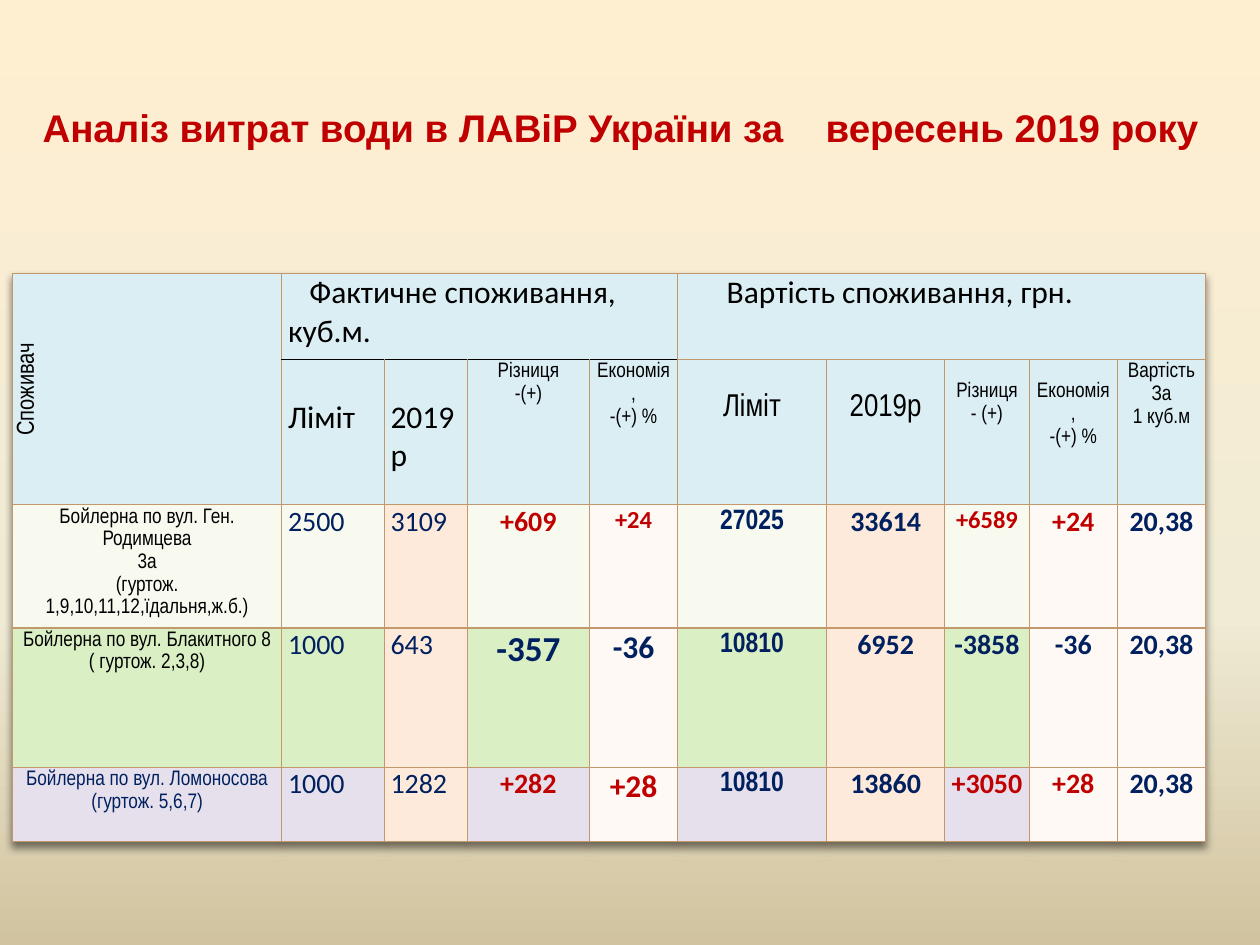
from copy import deepcopy
from dataclasses import dataclass

from lxml.etree import SubElement
from pptx import Presentation
from pptx.dml.color import RGBColor
from pptx.enum.text import MSO_ANCHOR, PP_ALIGN
from pptx.oxml import parse_xml
from pptx.oxml.ns import nsdecls, qn
from pptx.util import Pt

RED, NAVY, BLACK, BROWN = "C00000", "002060", "000000", "C3986D"
HEADER_FILL, YEAR_FILL, PALE_FILL = "DBEEF4", "FDEADA", "FEF9F4"
COLUMN_WIDTHS = [153.8, 58.6, 47.5, 69.8, 50.4, 85, 67.7, 48.2, 50.4, 50.4]
ROW_HEIGHTS = [49, 83, 70.4, 79.6, 42.5]
COLUMN_FILLS = {2: YEAR_FILL, 6: YEAR_FILL, 4: PALE_FILL, 8: PALE_FILL, 9: PALE_FILL}


@dataclass
class TextStyle:
    """Look of the text in one table cell."""
    size: float
    font: str = "Calibri"
    colour: str = BLACK
    bold: bool = False
    centred: bool = False
    indent: float = 0
    top: float = 0


def narrow(size, **options):
    """Return a centred Arial Narrow style."""
    return TextStyle(size, "Arial Narrow", centred=True, **options)


SUBHEADERS = [
    ("Ліміт", TextStyle(18, top=22)),
    ("2019р", TextStyle(18, top=22)),
    ("Різниця\n-(+)", narrow(12)),
    ("Економія,\n-(+) %", narrow(12)),
    ("Ліміт", narrow(18, top=17)),
    ("2019р", narrow(18, top=17)),
    ("Різниця\n- (+)", narrow(12, top=11.5)),
    ("Економія,\n-(+) %", narrow(12, top=11.5)),
    ("Вартість\nЗа\n1 куб.м", narrow(12)),
]
CONSUMERS = [
    ("Бойлерна по вул. Ген. Родимцева\n3а\n(гуртож. 1,9,10,11,12,їдальня,ж.б.)", BLACK, "F8FAF0",
     ["2500", "3109", "+609", "+24", "27025", "33614", "+6589", "+24", "20,38"], {4: 14, 7: 14}),
    ("Бойлерна по вул. Блакитного 8\n( гуртож. 2,3,8)", BLACK, "DAEFC3",
     ["1000", "643", "-357", "-36", "10810", "6952", "-3858", "-36", "20,38"], {3: 20, 4: 18}),
    ("Бойлерна по вул. Ломоносова\n(гуртож. 5,6,7)", NAVY, "E6E0EC",
     ["1000", "1282", "+282", "+28", "10810", "13860", "+3050", "+28", "20,38"], {4: 18}),
]


def rgb(value):
    """Turn a hex string into a colour."""
    return RGBColor.from_string(value)


def add_span(para, text, style):
    """Add one formatted run to a paragraph."""
    span = para.add_run()
    span.text = text
    span.font.size = Pt(style.size)
    span.font.name = style.font
    span.font.bold = style.bold
    span.font.color.rgb = rgb(style.colour)
    return span


def paint_background(slide):
    """Fill the background with a vertical three-stop gradient."""
    fill = slide.background.fill
    fill.gradient()
    fill.gradient_angle = 270
    stop_list = slide.element.xpath(".//p:bg//a:gsLst")[0]
    stop_list.append(deepcopy(stop_list[-1]))
    stops = [(0, "FFEFD1"), (0.65, "F0EBD5"), (1, "D1C39F")]
    for stop, (position, colour) in zip(fill.gradient_stops, stops):
        stop.position = position
        stop.color.rgb = rgb(colour)


def write_title(slide):
    """Place and format the slide title."""
    title = slide.shapes.title
    title.left, title.top, title.width, title.height = Pt(14.4), Pt(14.5), Pt(680.4), Pt(116)
    title.text_frame.vertical_anchor = MSO_ANCHOR.MIDDLE
    title.text_frame.word_wrap = True
    para = title.text_frame.paragraphs[0]
    para.alignment = PP_ALIGN.CENTER
    style = TextStyle(22, "Arial", RED, bold=True)
    add_span(para, "Аналіз витрат води в ЛАВіР України за", style)
    gap = add_span(para, " ", style)
    gap.font._element.set("spc", "1800")
    add_span(para, "вересень 2019 року", style)


def draw_border(cell, side, colour, width):
    """Add a solid line to one side of a cell."""
    line = SubElement(cell._tc.get_or_add_tcPr(), qn(f"a:ln{side}"), w=str(Pt(width)))
    fill = SubElement(line, qn("a:solidFill"))
    SubElement(fill, qn("a:srgbClr"), val=colour)


def format_cell(cell, fill, black_side=None):
    """Set the borders, fill and margins of a cell."""
    for side in "LRTB":
        colour, width = (BLACK, 1) if side == black_side else (BROWN, 0.79)
        draw_border(cell, side, colour, width)
    cell.fill.solid()
    cell.fill.fore_color.rgb = rgb(fill)
    cell.margin_left = cell.margin_right = Pt(3.6)
    cell.margin_top = cell.margin_bottom = 0


def write_cell(cell, text, style):
    """Write the lines of a cell as paragraphs."""
    cell.margin_top = Pt(style.top)
    frame = cell.text_frame
    for number, line in enumerate(text.split("\n")):
        para = frame.add_paragraph() if number else frame.paragraphs[0]
        para.alignment = PP_ALIGN.CENTER if style.centred else PP_ALIGN.LEFT
        if style.font == "Arial Narrow":
            para.line_spacing = 1.15
        if style.indent:
            para._p.get_or_add_pPr().set("indent", str(Pt(style.indent)))
        add_span(para, line, style)


def number_style(column, text, size):
    """Choose the style of a figure from its column and sign."""
    colour = RED if text.startswith("+") else NAVY
    font = "Arial Narrow" if column == 5 else "Calibri"
    return TextStyle(size, font, colour, bold=column > 2, centred=column > 2)


def add_shadow(table):
    """Give the table a soft shadow below it."""
    table._tbl.tblPr.insert(0, parse_xml(
        f'<a:effectLst {nsdecls("a")}><a:outerShdw blurRad="57150" dist="38100" dir="5400000" '
        'algn="ctr" rotWithShape="0"><a:srgbClr val="000000"><a:alpha val="50000"/>'
        '</a:srgbClr></a:outerShdw></a:effectLst>'))


def add_grid(slide):
    """Add the empty table with its sizes, fills and borders."""
    frame = slide.shapes.add_table(len(ROW_HEIGHTS), len(COLUMN_WIDTHS), Pt(7.2), Pt(156.5),
                                   Pt(sum(COLUMN_WIDTHS)), Pt(sum(ROW_HEIGHTS)))
    table = frame.table
    table.first_row = table.horz_banding = False
    for column, width in zip(table.columns, COLUMN_WIDTHS):
        column.width = Pt(width)
    for index, height in enumerate(ROW_HEIGHTS):
        table.rows[index].height = Pt(height)
        for column in range(len(COLUMN_WIDTHS)):
            fill = HEADER_FILL
            if index > 1:
                fill = COLUMN_FILLS.get(column, CONSUMERS[index - 2][2])
            black_side = {0: "B", 1: "T"}.get(index) if 1 <= column <= 4 else None
            format_cell(table.cell(index, column), fill, black_side)
    add_shadow(table)
    return table


def write_headers(table):
    """Merge and fill the two header rows."""
    for first, last in [((0, 0), (1, 0)), ((0, 1), (0, 4)), ((0, 5), (0, 9))]:
        table.cell(*first).merge(table.cell(*last))
    corner = table.cell(0, 0)
    write_cell(corner, "Споживач", narrow(14))
    corner.vertical_anchor = MSO_ANCHOR.MIDDLE
    corner._tc.get_or_add_tcPr().set("vert", "vert270")
    write_cell(table.cell(0, 1), "Фактичне споживання, куб.м.", TextStyle(18, indent=12.2))
    write_cell(table.cell(0, 5), "Вартість споживання, грн.", TextStyle(18, indent=24.4))
    for column, (text, style) in enumerate(SUBHEADERS, 1):
        write_cell(table.cell(1, column), text, style)


def write_consumers(table):
    """Fill one row for each consumer."""
    for row, (name, colour, _, figures, sizes) in enumerate(CONSUMERS, 2):
        write_cell(table.cell(row, 0), name, narrow(12, colour=colour))
        for column, text in enumerate(figures, 1):
            style = number_style(column, text, sizes.get(column, 16))
            write_cell(table.cell(row, column), text, style)


def main():
    """Build the deck and save it."""
    deck = Presentation()
    deck.slide_width, deck.slide_height = Pt(720), Pt(540)
    page = deck.slides.add_slide(deck.slide_layouts[5])
    paint_background(page)
    write_title(page)
    table = add_grid(page)
    write_headers(table)
    write_consumers(table)
    deck.save("out.pptx")


if __name__ == "__main__":
    main()
